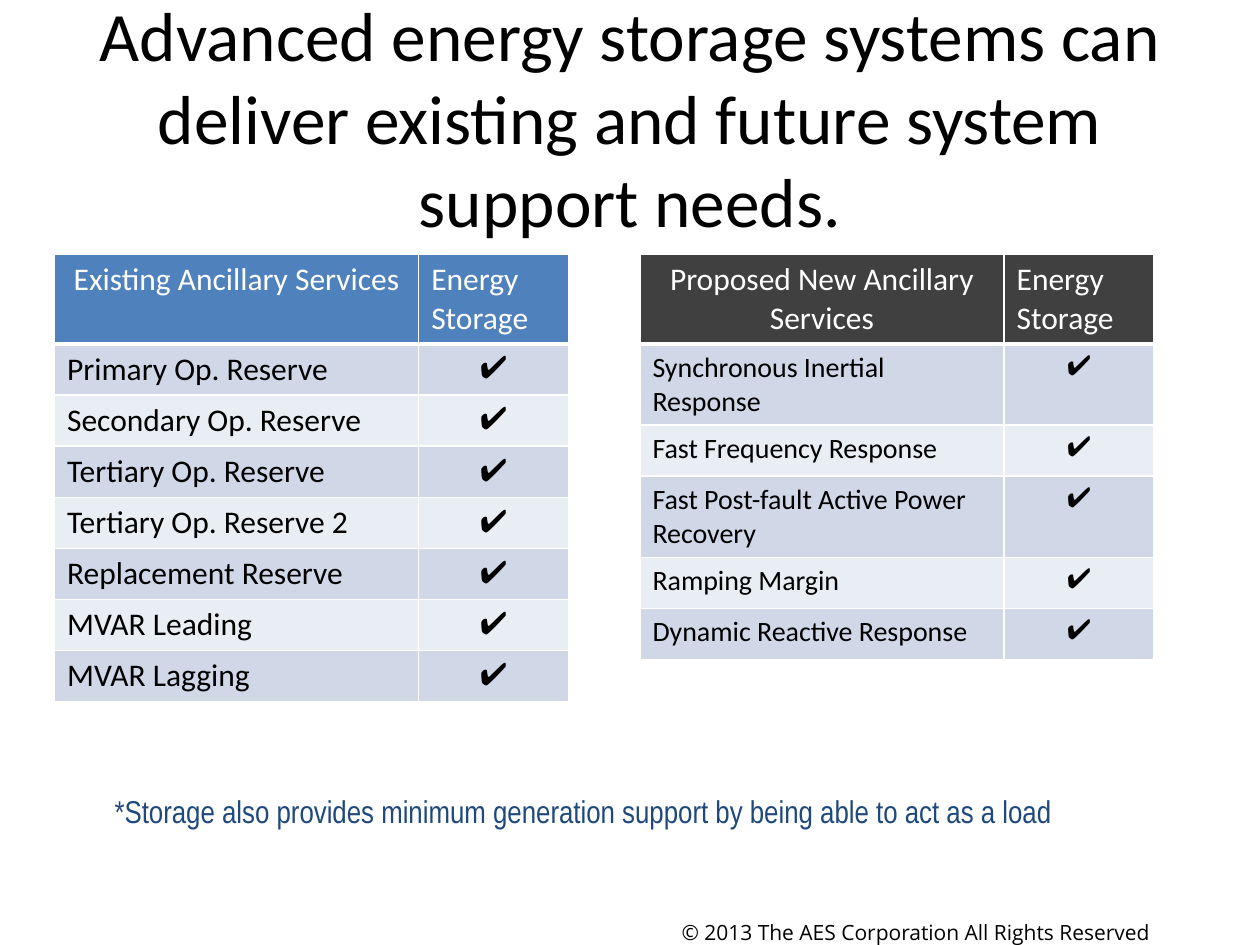
from dataclasses import dataclass

from lxml import etree
from pptx import Presentation, util as u
from pptx.dml.color import RGBColor
from pptx.enum import text as t
from pptx.oxml import ns


@dataclass(frozen=True)
class Theme:
    black: str = "000000"
    white: str = "FFFFFF"
    blue: str = "4F81BD"
    dark: str = "404040"
    navy: str = "1F497D"
    bands: tuple = ("D0D8E8", "E9EDF4")
    head: float = 39.6
    large: float = 18
    small: float = 16
    tiny: float = 12
    main: str = "Calibri"
    mark: str = "Arial"
    note: str = "Arial Narrow"
    legal: str = "Open Sans"


LOOK = Theme()
MID = t.PP_ALIGN.CENTER
LEFT = t.PP_ALIGN.LEFT
TICK = "✔"
NEED = "Energy Storage"
COLS = (7.34, 3.02)
ROW = 1.03

OLD = (
    "Primary Op. Reserve",
    "Secondary Op. Reserve",
    "Tertiary Op. Reserve",
    "Tertiary Op. Reserve 2",
    "Replacement Reserve",
    "MVAR Leading",
    "MVAR Lagging",
)
NEW = (
    "Synchronous Inertial Response",
    "Fast Frequency Response",
    "Fast Post-fault Active Power Recovery",
    "Ramping Margin",
    "Dynamic Reactive Response",
)


def write(frame, words, size, face, color, align=LEFT):
    para = frame.paragraphs[0]
    para.alignment = align
    run = para.add_run()
    run.text = words
    run.font.size = u.Pt(size)
    run.font.name = face
    run.font.bold = False
    run.font.color.rgb = RGBColor.from_string(color)


def edge(cell, base):
    props = cell._tc.get_or_add_tcPr()
    for side, width in (("L", 1), ("R", 1), ("T", 1), ("B", base)):
        line = etree.SubElement(props, ns.qn(f"a:ln{side}"), w=str(u.Pt(width)))
        fill = etree.SubElement(line, ns.qn("a:solidFill"))
        etree.SubElement(fill, ns.qn("a:srgbClr"), val=LOOK.white)


def paint(cell, color, base=1):
    edge(cell, base)
    cell.fill.solid()
    cell.fill.fore_color.rgb = RGBColor.from_string(color)


def title(slide, box, words):
    shape = slide.shapes.title
    shape.left, shape.top, shape.width, shape.height = map(u.Cm, box)
    frame = shape.text_frame
    frame.auto_size = t.MSO_AUTO_SIZE.NONE
    frame.vertical_anchor = t.MSO_ANCHOR.MIDDLE
    write(frame, words, LOOK.head, LOOK.main, LOOK.black, MID)


def chart(slide, left, top, head, names, color, size):
    count = len(names) + 1
    box = map(u.Cm, (left, top, sum(COLS), ROW * count))
    table = slide.shapes.add_table(count, len(COLS), *box).table
    for col, width in zip(table.columns, COLS):
        col.width = u.Cm(width)
    for cell, words, align in zip(table.rows[0].cells, (head, NEED), (MID, LEFT)):
        paint(cell, color, 3)
        write(cell.text_frame, words, LOOK.large, LOOK.main, LOOK.white, align)
    for row, name in enumerate(names, 1):
        parts = ((name, LOOK.main, LEFT), (TICK, LOOK.mark, MID))
        for cell, (words, face, align) in zip(table.rows[row].cells, parts):
            paint(cell, LOOK.bands[(row - 1) % 2])
            write(cell.text_frame, words, size, face, LOOK.black, align)


def label(slide, box, words, size, face, color):
    frame = slide.shapes.add_textbox(*map(u.Cm, box)).text_frame
    frame.word_wrap = False
    frame.auto_size = t.MSO_AUTO_SIZE.SHAPE_TO_FIT_TEXT
    write(frame, words, size, face, color)


def main():
    deck = Presentation()
    deck.slide_width, deck.slide_height = u.Cm(25.4), u.Cm(19.05)
    slide = deck.slides.add_slide(deck.slide_layouts[5])
    title(slide, (1.27, 0.76, 22.86, 3.18),
          "Advanced energy storage systems can deliver existing and future system support needs.")
    chart(slide, 1.1, 5.13, "Existing Ancillary Services", OLD, LOOK.blue, LOOK.large)
    chart(slide, 12.9, 5.13, "Proposed New Ancillary Services", NEW, LOOK.dark, LOOK.small)
    label(slide, (2.06, 15.85, 19.94, 1.02),
          "*Storage also provides minimum generation support by being able to act as a load",
          LOOK.large, LOOK.note, LOOK.navy)
    label(slide, (13.49, 18.42, 10.64, 0.76),
          "© 2013 The AES Corporation All Rights Reserved",
          LOOK.tiny, LOOK.legal, LOOK.black)
    deck.save("out.pptx")


if __name__ == "__main__":
    main()
